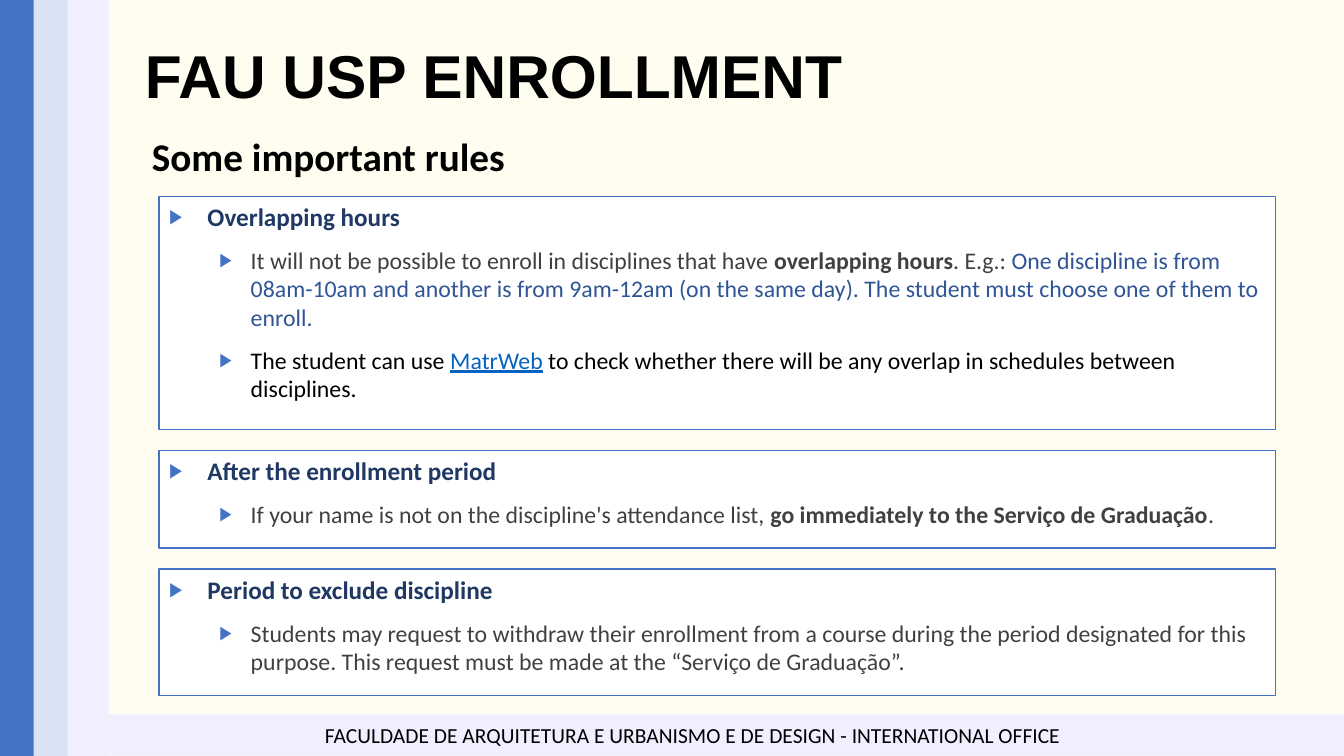
from dataclasses import dataclass

from lxml import etree
from pptx import Presentation
from pptx import util as u
from pptx.dml.color import RGBColor
from pptx.enum import shapes, text
from pptx.oxml import ns


@dataclass(frozen=True)
class Theme:
    """Colours, fonts and type sizes of the slide."""
    background: str = "FEFDF0"
    accent: str = "4472C4"
    pale_blue: str = "DAE3F3"
    lavender: str = "EFEFFF"
    white: str = "FFFFFF"
    black: str = "000000"
    navy: str = "203864"
    grey: str = "404040"
    example: str = "2F5597"
    link: str = "0563C1"
    heading_font: str = "Arial"
    body_font: str = "Calibri"
    title_size: float = 43.2
    subtitle_size: float = 28
    card_title_size: float = 18
    card_text_size: float = 17
    footer_size: float = 15.3


class RulesSlide:
    """Draws the elements of the slide in one theme."""

    def __init__(self, presentation, theme):
        """Add a blank slide with the theme background."""
        self.theme = theme
        self.slide = presentation.slides.add_slide(presentation.slide_layouts[6])
        fill = self.slide.background.fill
        fill.solid()
        fill.fore_color.rgb = RGBColor.from_string(theme.background)

    def add_run(self, paragraph, wording, size, color, bold=False, underline=False, font=None):
        """Append one formatted run."""
        run = paragraph.add_run()
        run.text = wording
        run.font.name = font or self.theme.body_font
        run.font.size = u.Pt(size)
        run.font.bold = bold
        run.font.underline = underline
        run.font.color.rgb = RGBColor.from_string(color)

    def label(self, box, wording, size, spacing, bold=True, font=None,
              align=text.PP_ALIGN.LEFT, anchor=text.MSO_ANCHOR.TOP):
        """Add a one-line text box."""
        shape = self.slide.shapes.add_textbox(*map(u.Cm, box))
        frame = shape.text_frame
        frame.word_wrap = True
        frame.vertical_anchor = anchor
        paragraph = frame.paragraphs[0]
        paragraph.alignment = align
        paragraph.line_spacing = spacing
        self.add_run(paragraph, wording, size, self.theme.black, bold, font=font)

    def rectangle(self, box, color, line=None):
        """Add a filled rectangle with an optional outline."""
        shape = self.slide.shapes.add_shape(shapes.MSO_SHAPE.RECTANGLE, *map(u.Cm, box))
        shape.shadow.inherit = False
        shape.fill.solid()
        shape.fill.fore_color.rgb = RGBColor.from_string(color)
        if line:
            shape.line.color.rgb = RGBColor.from_string(line)
            shape.line.width = u.Pt(1)
        else:
            shape.line.fill.background()
        return shape

    def bullet(self, paragraph, margin, hanging):
        """Give a paragraph a triangular bullet and a hanging indent."""
        properties = paragraph._p.get_or_add_pPr()
        properties.set("marL", str(u.Cm(margin)))
        properties.set("indent", str(-u.Cm(hanging)))
        color = etree.SubElement(properties, ns.qn("a:buClr"))
        etree.SubElement(color, ns.qn("a:srgbClr"), val=self.theme.accent)
        etree.SubElement(properties, ns.qn("a:buSzPct"), val="80000")
        etree.SubElement(properties, ns.qn("a:buFont"), typeface=self.theme.heading_font)
        etree.SubElement(properties, ns.qn("a:buChar"), char="▶")

    def card(self, box, heading, rules):
        """Add an outlined card with a heading and its rules."""
        theme = self.theme
        frame = self.rectangle(box, theme.white, theme.accent).text_frame
        frame.word_wrap = True
        frame.vertical_anchor = text.MSO_ANCHOR.TOP
        title_run = (heading, theme.navy, True)
        for index, runs in enumerate([[title_run], *rules]):
            paragraph = frame.add_paragraph() if index else frame.paragraphs[0]
            paragraph.alignment = text.PP_ALIGN.LEFT
            paragraph.level = 1 if index else 0
            paragraph.space_before = u.Pt(10)
            self.bullet(paragraph, *((2.06, 0.79) if index else (0.97, 0.97)))
            size = theme.card_text_size if index else theme.card_title_size
            for wording, color, *emphasis in runs:
                self.add_run(paragraph, wording, size, color, *emphasis)


def main():
    """Build and save the presentation."""
    theme = Theme()
    presentation = Presentation()
    presentation.slide_width = u.Cm(33.87)
    presentation.slide_height = u.Cm(19.05)
    page = RulesSlide(presentation, theme)

    page.label((3.4, 1.02, 28.14, 1.96), "FAU USP ENROLLMENT", theme.title_size, 0.9,
               font=theme.heading_font, anchor=text.MSO_ANCHOR.MIDDLE)
    page.label((3.58, 3.45, 28.14, 1.3), "Some important rules", theme.subtitle_size, 0.8)

    stripes = [theme.accent, theme.pale_blue, theme.lavender]
    for index, color in enumerate(stripes):
        page.rectangle((index * 0.85, 0, 1.04, 19.05), color)
    page.rectangle((2.73, 18, 31.14, 1.04), theme.lavender)
    page.label((7.39, 18.26, 20.14, 0.74),
               "FACULDADE DE ARQUITETURA E URBANISMO E DE DESIGN - INTERNATIONAL OFFICE",
               theme.footer_size, 0.7, bold=False, align=text.PP_ALIGN.CENTER)

    cards = [
        (5.87, "Overlapping hours", [
            [("It will not be possible to enroll in disciplines that have ", theme.grey),
             ("overlapping hours", theme.grey, True),
             (". E.g.: ", theme.grey),
             ("One discipline is from 08am-10am and another is from 9am-12am "
              "(on the same day). The student must choose one of them to enroll.",
              theme.example)],
            [("The student can use ", theme.black),
             ("MatrWeb", theme.link, False, True),
             (" to check whether there will be any overlap in schedules between "
              "disciplines.", theme.black)],
        ]),
        (2.46, "After the enrollment period", [
            [("If your name is not on the discipline's attendance list, ", theme.grey),
             ("go immediately to the Serviço de Graduação", theme.grey, True),
             (".", theme.grey)],
        ]),
        (3.18, "Period to exclude discipline", [
            [("Students may request to withdraw their enrollment from a course during "
              "the period designated for this purpose. This request must be made at "
              "the “Serviço de Graduação”.", theme.grey)],
        ]),
    ]
    top, gap = 4.95, 0.53
    for height, heading, rules in cards:
        page.card((4.01, top, 28.14, height), heading, rules)
        top += height + gap

    presentation.save("out.pptx")


if __name__ == "__main__":
    main()
